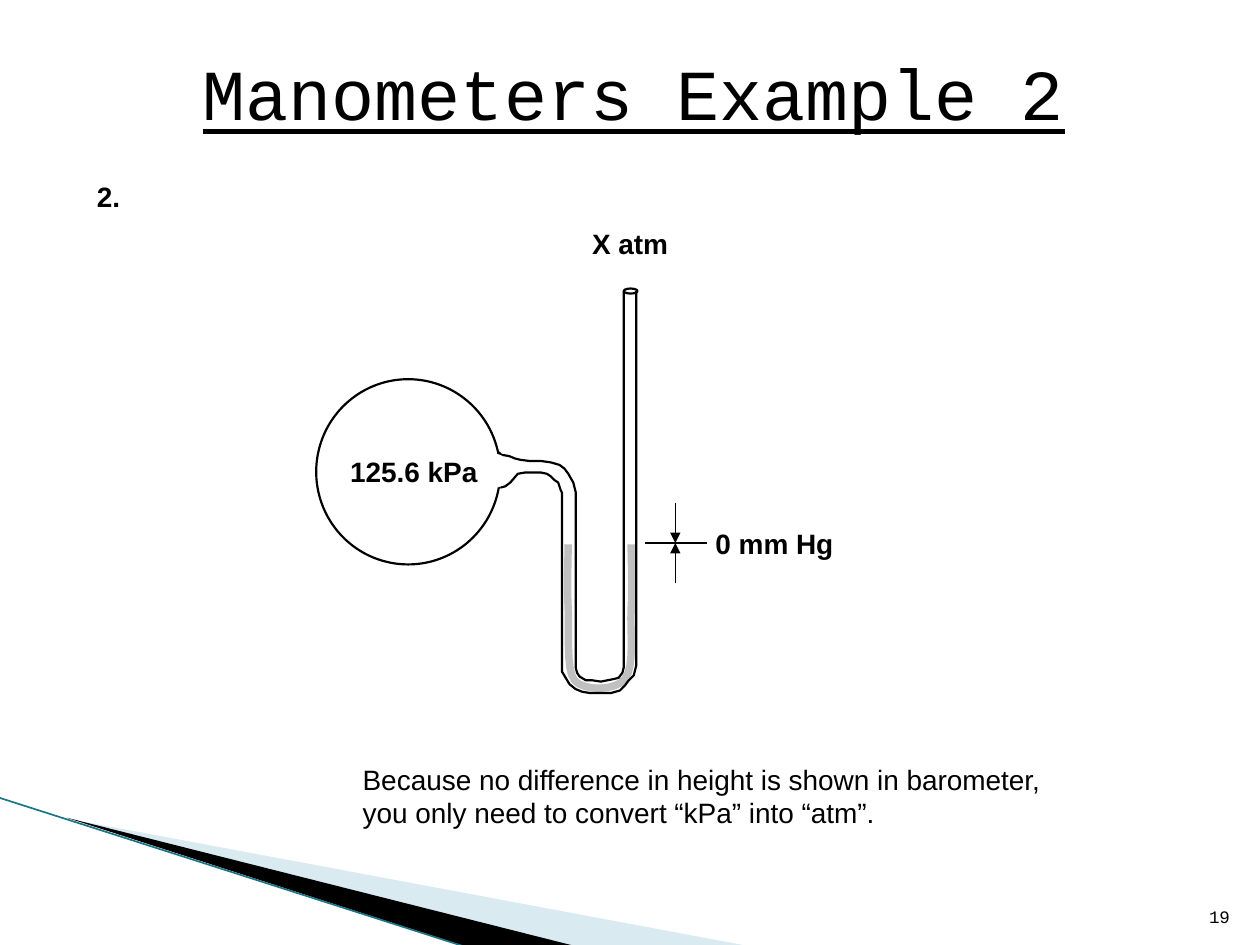
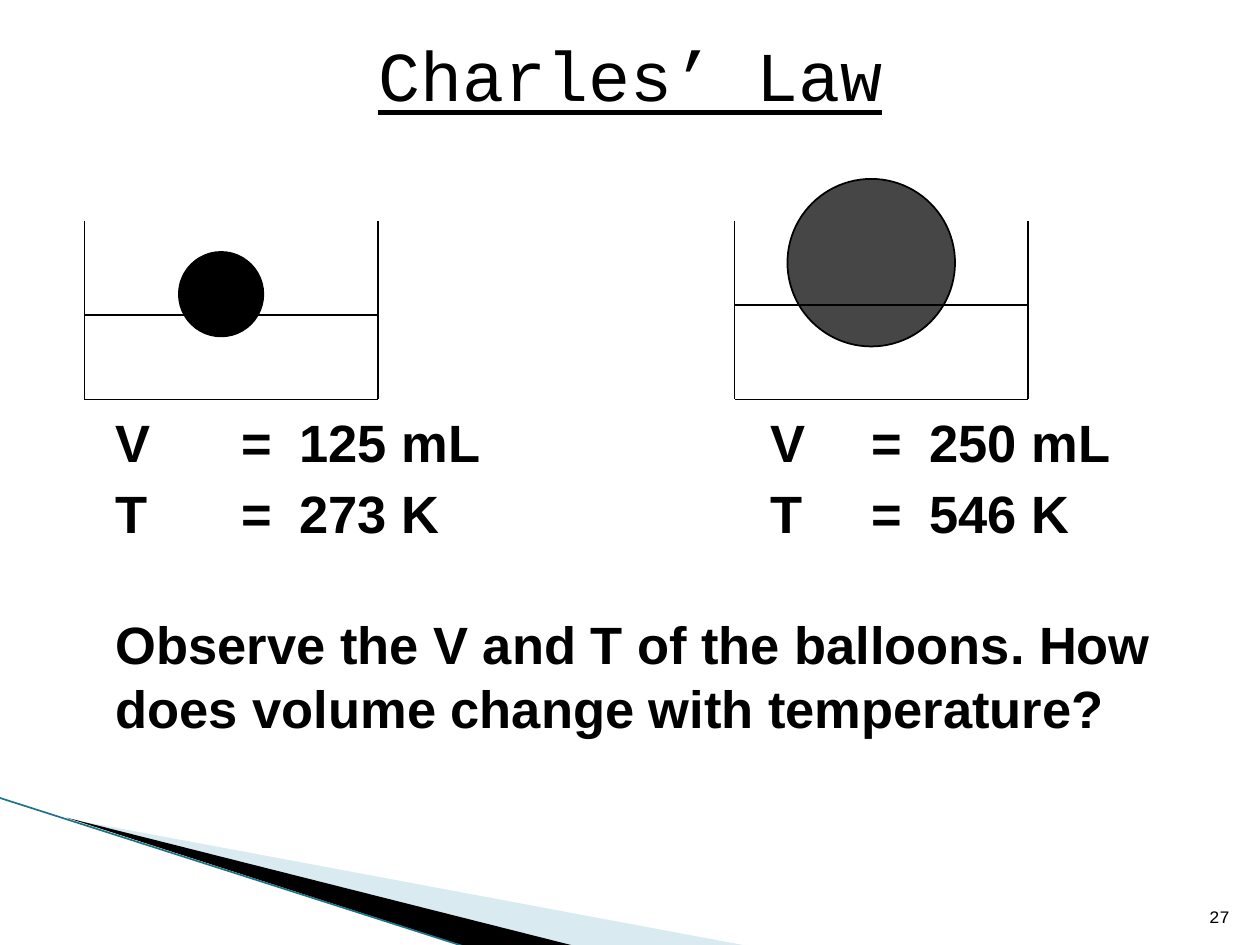
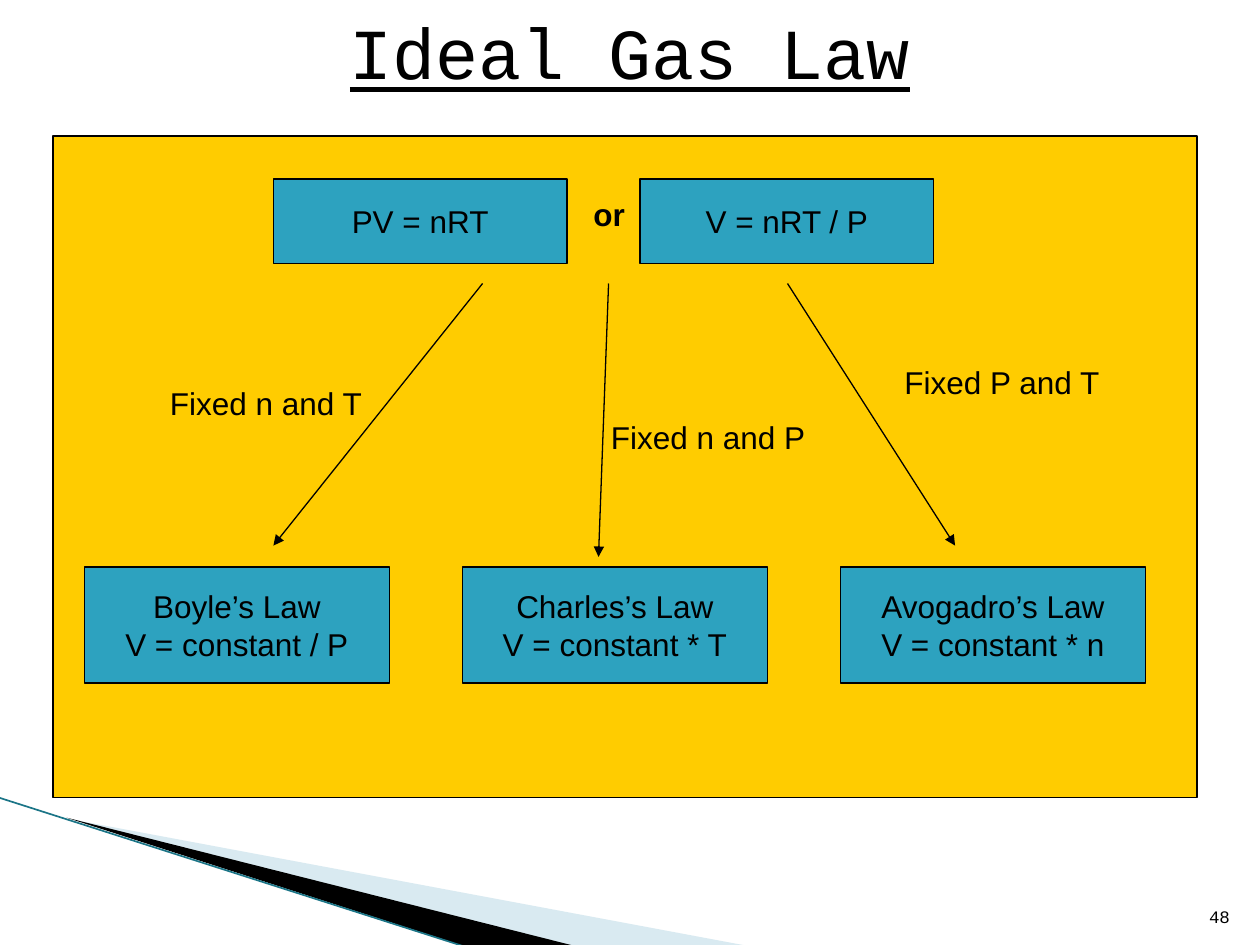
from dataclasses import dataclass
from lxml import etree
from pptx import Presentation
from pptx import util as u
from pptx.dml.color import RGBColor
from pptx.enum import shapes, text
from pptx.oxml.ns import qn


@dataclass(frozen=True)
class Theme:
    ink: str = "000000"
    paper: str = "FFFFFF"
    mercury: str = "C0C0C0"
    balloon: str = "464646"
    panel: str = "FFCC00"
    card: str = "2DA2BF"
    band: str = "A0CBDC"
    edge: str = "1B7587"
    title_font: str = "Courier New"
    body_font: str = "Arial"
    number_size: int = 10
    label_size: int = 16
    diagram_size: int = 18
    body_size: int = 30
    body_pitch: float = 36.6


THEME = Theme()
WIDTH, HEIGHT = 10, 7.5
LEFT, CENTER, RIGHT = text.PP_ALIGN.LEFT, text.PP_ALIGN.CENTER, text.PP_ALIGN.RIGHT
TOP, MIDDLE, BOTTOM = (text.MSO_ANCHOR.TOP, text.MSO_ANCHOR.MIDDLE,
                       text.MSO_ANCHOR.BOTTOM)
RECT, OVAL = shapes.MSO_SHAPE.RECTANGLE, shapes.MSO_SHAPE.OVAL

# ---- Content: manometer ----
MANOMETER_LABELS = [
    ("0 mm Hg", (5.58, 4.13, 1.14, 0.37)),
    ("X atm", (4.6, 1.75, 0.81, 0.37)),
    ("125.6 kPa", (2.68, 3.56, 1.21, 0.37)),
    ("2.", (0.67, 1.38, 0.39, 0.37)),
]
HINT = ("Because no difference in height is shown in barometer,\n"
        "you only need to convert “kPa” into “atm”.")
MERCURY_CURVES = [  # each curve starts where the one before ends
    [(4.51, 4.32), (4.51, 4.41), (4.5, 4.65), (4.51, 4.83)],
    [(4.51, 4.83), (4.52, 5), (4.49, 5.31), (4.56, 5.4)],
    [(4.56, 5.4), (4.64, 5.49), (4.89, 5.48), (4.96, 5.39)],
    [(4.96, 5.39), (5.04, 5.29), (5, 5.01), (5.01, 4.83)],
    [(5.01, 4.83), (5.02, 4.66), (5.01, 4.43), (5.01, 4.32)],
]
OUTER_TUBE = [
    (5.05, 2.31), (5.05, 5.28), (5.04, 5.32), (5.03, 5.36), (4.99, 5.4),
    (4.96, 5.44), (4.92, 5.48), (4.85, 5.5), (4.68, 5.5), (4.62, 5.49),
    (4.57, 5.47), (4.52, 5.43), (4.49, 5.38), (4.46, 5.33), (4.46, 3.91),
    (4.45, 3.89), (4.43, 3.83), (4.4, 3.81), (4.37, 3.78), (4.34, 3.76),
    (4.29, 3.75), (4.17, 3.75), (4.11, 3.76), (4.05, 3.83), (4.01, 3.86),
    (3.97, 3.87),
]
INNER_TUBE = [
    (4.95, 2.31), (4.95, 5.3), (4.94, 5.34), (4.91, 5.38), (4.87, 5.39),
    (4.77, 5.41), (4.7, 5.4), (4.65, 5.4), (4.6, 5.37), (4.58, 5.34),
    (4.57, 5.3), (4.57, 3.91), (4.56, 3.87), (4.55, 3.83), (4.51, 3.76),
    (4.48, 3.72), (4.44, 3.69), (4.37, 3.67), (4.3, 3.66), (4.21, 3.66),
    (4.13, 3.65), (4.09, 3.64), (4.04, 3.62), (3.98, 3.61), (3.96, 3.59),
]
BULB_MOUTH = [(3.94, 3.6), (3.99, 3.62), (4, 3.85), (3.95, 3.87)]

# ---- Content: balloons ----
TANKS = [  # left side, water level, balloon (left, top, diameter), colour
    (0.67, 2.5, (1.42, 2, 0.67), THEME.ink),
    (5.83, 2.42, (6.25, 1.42, 1.33), THEME.balloon),
]
READINGS = [
    ("V", "125 mL", "250 mL"),
    ("T", "273 K", "546 K"),
]
QUESTION = ("Observe the V and T of the balloons. How does volume change "
            "with temperature?")
READING_TABS = (1, 1.46, 5.2, 6, 6.46)

# ---- Content: gas laws ----
FORMULAS = ["PV = nRT", "V = nRT / P"]
LAWS = [
    "Boyle’s Law\nV = constant / P",
    "Charles’s Law\nV = constant * T",
    "Avogadro’s Law\nV = constant * n",
]
CONDITIONS = [  # wording, label place, arrow start, arrow end
    ("Fixed n and T", (1.25, 3, 2, 0.4), (3.83, 2.25), (2.17, 4.33)),
    ("Fixed n and P", (4.75, 3.27, 1.75, 0.4), (4.83, 2.25), (4.75, 4.42)),
    ("Fixed P and T", (7.08, 2.83, 2, 0.4), (6.25, 2.25), (7.58, 4.33)),
]


# ---- Drawing helpers ----
def inches(values):
    return [u.Inches(value) for value in values]


def paint(shape, fill=None, line=None, width=1):
    shape.shadow.inherit = False
    if fill:
        shape.fill.solid()
        shape.fill.fore_color.rgb = RGBColor.from_string(fill)
    else:
        shape.fill.background()
    if line:
        shape.line.color.rgb = RGBColor.from_string(line)
        shape.line.width = u.Pt(width)
    else:
        shape.line.fill.background()
    return shape


def write(shape, wording, size, font=THEME.body_font, bold=False, underline=False,
          align=LEFT, anchor=TOP, wrap=True):
    frame = shape.text_frame
    frame.text = wording
    frame.word_wrap = wrap
    frame.vertical_anchor = anchor
    for paragraph in frame.paragraphs:
        paragraph.alignment = align
        for run in paragraph.runs:
            run.font.name, run.font.size = font, u.Pt(size)
            run.font.bold, run.font.underline = bold, underline
            run.font.color.rgb = RGBColor.from_string(THEME.ink)
    return frame


def add_text(slide, place, wording, size, **style):
    return write(slide.shapes.add_textbox(*inches(place)), wording, size, **style)


def add_preset(slide, kind, place, **look):
    return paint(slide.shapes.add_shape(kind, *inches(place)), **look)


def add_outline(slide, points, closed=False, **look):
    first, *rest = [inches(point) for point in points]
    builder = slide.shapes.build_freeform(*first, scale=1.0)
    builder.add_line_segments(rest, close=closed)
    return paint(builder.convert_to_shape(), **look)


def add_line(slide, start, end, width=1, color=THEME.ink, arrow=False):
    line = slide.shapes.add_connector(shapes.MSO_CONNECTOR.STRAIGHT,
                                      *inches(start + end))
    line.line.color.rgb = RGBColor.from_string(color)
    line.line.width = u.Pt(width)
    properties = line.line._get_or_add_ln()
    if arrow:
        etree.SubElement(properties, qn("a:tailEnd"), type="triangle")
    etree.SubElement(properties.getparent(), qn("a:effectLst"))


def bezier(start, pull_a, pull_b, end, steps=8):
    for step in range(steps + 1):
        t = step / steps
        weights = ((1 - t) ** 3, 3 * t * (1 - t) ** 2, 3 * t * t * (1 - t), t ** 3)
        yield tuple(sum(w * point[axis] for w, point
                        in zip(weights, (start, pull_a, pull_b, end)))
                    for axis in (0, 1))


def new_slide(deck, title, title_place, title_size, number):
    slide = deck.slides.add_slide(deck.slide_layouts[6])
    # Corner bands
    pale = add_outline(slide, [(0.55, 6.5), (5.95, 7.51), (4.56, 7.51)],
                       closed=True, fill=THEME.band)
    tint = pale.fill._xPr.find(qn("a:solidFill"))[0]
    etree.SubElement(tint, qn("a:alpha"), val="40000")
    add_outline(slide, [(0.53, 6.49), (4.57, 7.51), (3.72, 7.52)],
                closed=True, fill=THEME.ink)
    add_line(slide, (-0.01, 6.33), (3.71, 7.52), 0.95, THEME.edge)
    # Page number and title
    add_text(slide, (9.46, 7.01, 0.4, 0.4), number, THEME.number_size,
             font=THEME.title_font, align=RIGHT, anchor=BOTTOM)
    add_text(slide, title_place, title, title_size, font=THEME.title_font,
             underline=True, align=CENTER, anchor=MIDDLE)
    return slide


# ---- Slides ----
def manometer_slide(deck):
    slide = new_slide(deck, "Manometers Example 2", (0.53, 0.33, 9, 0.8), 41, "19")
    glass = dict(line=THEME.ink, width=1.25)
    # Mercury, bulb and tube
    mercury = [point for curve in MERCURY_CURVES for point in bezier(*curve)]
    add_outline(slide, mercury, line=THEME.mercury, width=4.25)
    add_preset(slide, OVAL, (2.51, 3.01, 1.46, 1.47), **glass)
    for wall in (OUTER_TUBE, INNER_TUBE):
        add_outline(slide, wall, **glass)
    add_outline(slide, BULB_MOUTH, closed=True, fill=THEME.paper)
    add_preset(slide, OVAL, (4.95, 2.29, 0.11, 0.04), **glass)
    # Height marker
    level, marker_x, reach = 4.31, 5.36, 0.32
    add_line(slide, (5.12, level), (5.61, level), 0.75)
    for offset in (-reach, reach):
        add_line(slide, (marker_x, level + offset), (marker_x, level), 0.75,
                 arrow=True)
    # Labels and hint
    for wording, place in MANOMETER_LABELS:
        add_text(slide, place, wording, THEME.label_size, bold=True, wrap=False)
    add_text(slide, (2.78, 6, 5.61, 0.64), HINT, THEME.label_size, wrap=False)


def balloon_slide(deck):
    slide = new_slide(deck, "Charles’ Law", (0.75, 0, 8.5, 1.17), 40, "27")
    # Readings in tabbed columns, then the question
    rows = [f"{name}\t=\t{cold}\t{name}\t=\t{warm}" for name, cold, warm in READINGS]
    frame = add_text(slide, (0.82, 3.2, 8.77, 2.8), "\n".join(rows + [QUESTION]),
                     THEME.body_size, bold=True)
    for paragraph, gap in zip(frame.paragraphs, (0, 4, 38)):
        paragraph.line_spacing = u.Pt(THEME.body_pitch)
        paragraph.space_before = u.Pt(gap)
        tabs = etree.SubElement(paragraph._p.get_or_add_pPr(), qn("a:tabLst"))
        for stop in READING_TABS:
            etree.SubElement(tabs, qn("a:tab"), pos=str(u.Inches(stop)), algn="l")
    # Tanks with floating balloons
    rim, floor, tank_width = 1.75, 3.17, 2.33
    for left, water, (x, y, diameter), color in TANKS:
        right = left + tank_width
        for side in (left, right):
            add_line(slide, (side, rim), (side, floor))
        add_line(slide, (left, floor), (right, floor))
        add_preset(slide, OVAL, (x, y, diameter, diameter), fill=color,
                   line=THEME.ink)
        add_line(slide, (left, water), (right, water))


def gas_law_slide(deck):
    slide = new_slide(deck, "Ideal Gas Law", (0.5, 0, 9, 0.8), 41, "48")
    size = THEME.diagram_size
    add_preset(slide, RECT, (0.42, 1.08, 9.08, 5.25), fill=THEME.panel,
               line=THEME.ink, width=0.75)
    # Rows of cards: wording, first left, step, top, width, height
    for cards, left, step, top, width, height in (
            (FORMULAS, 2.17, 2.91, 1.42, 2.33, 0.67),
            (LAWS, 0.67, 3, 4.5, 2.42, 0.92)):
        for column, wording in enumerate(cards):
            card = add_preset(slide, RECT, (left + column * step, top, width, height),
                              fill=THEME.card, line=THEME.ink, width=0.75)
            write(card, wording, size, align=CENTER, anchor=MIDDLE, wrap=False)
    # Arrows and their conditions
    add_text(slide, (4.5, 1.5, 0.67, 0.4), "or", size, bold=True, align=CENTER)
    for wording, place, start, end in CONDITIONS:
        add_line(slide, start, end, 0.75, arrow=True)
        add_text(slide, place, wording, size)


def main():
    deck = Presentation()
    deck.slide_width, deck.slide_height = inches((WIDTH, HEIGHT))
    for build in (manometer_slide, balloon_slide, gas_law_slide):
        build(deck)
    deck.save("out.pptx")


if __name__ == "__main__":
    main()
